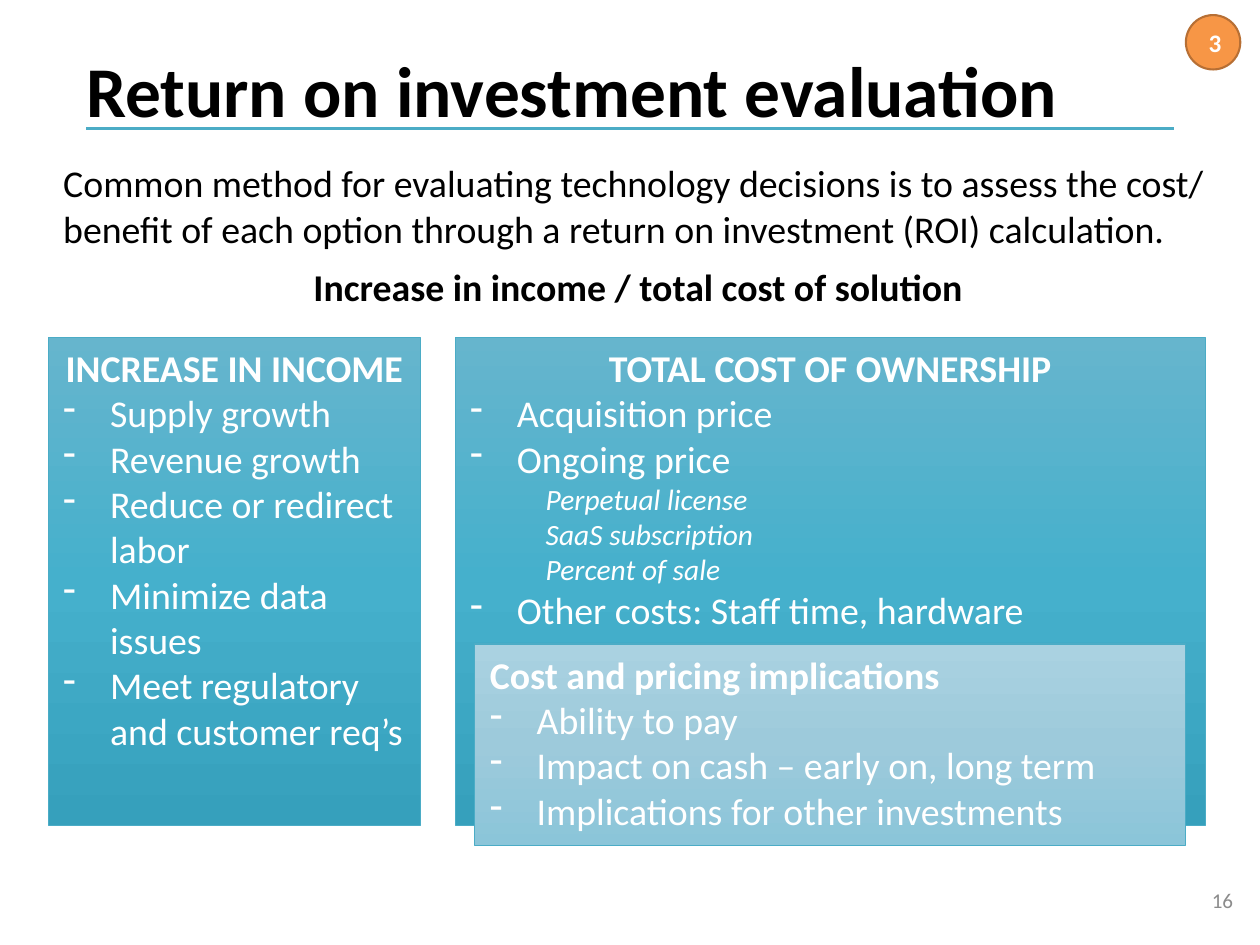
from copy import deepcopy

from lxml.etree import SubElement
from pptx import Presentation
from pptx.dml.color import RGBColor
from pptx.enum.shapes import MSO_CONNECTOR, MSO_SHAPE
from pptx.enum.text import MSO_ANCHOR, MSO_AUTO_SIZE, PP_ALIGN
from pptx.oxml.ns import qn
from pptx.util import Inches, Pt

BLACK = RGBColor(0x00, 0x00, 0x00)
WHITE = RGBColor(0xFF, 0xFF, 0xFF)
GRAY = RGBColor(0x8C, 0x8C, 0x8C)
TEAL = RGBColor(0x4B, 0xAC, 0xC6)
ORANGE = RGBColor(0xF7, 0x96, 0x46)
DARK_ORANGE = RGBColor(0xB7, 0x6F, 0x34)
STRONG_GRADIENT = (
    RGBColor(0x66, 0xB5, 0xCD),
    RGBColor(0x45, 0xB0, 0xCC),
    RGBColor(0x36, 0xA0, 0xBC),
)
PALE_GRADIENT = (
    RGBColor(0xAA, 0xD2, 0xE1),
    RGBColor(0x9D, 0xCA, 0xDB),
    RGBColor(0x8B, 0xC5, 0xD9),
)


def write(paragraph, text, size=18, color=BLACK, bold=False, italic=False,
          align=PP_ALIGN.LEFT, before=0, line_spacing=None, indent=0,
          bullet=None, font_name="Calibri"):
    properties = paragraph._p.get_or_add_pPr()
    if bullet:
        properties.set("marL", str(Inches(0.31)))
        properties.set("indent", str(Inches(-0.31)))
        SubElement(properties, qn("a:buChar")).set("char", bullet)
    elif indent:
        properties.set("marL", str(Inches(indent)))
        properties.set("indent", "0")
    paragraph.alignment = align
    paragraph.space_before = Pt(before)
    if line_spacing:
        paragraph.line_spacing = line_spacing
    run = paragraph.add_run()
    run.text = text
    run.font.name = font_name
    run.font.size = Pt(size)
    run.font.color.rgb = color
    run.font.bold = bold
    run.font.italic = italic


class SlideBuilder:
    def __init__(self, presentation):
        self.slide = presentation.slides.add_slide(presentation.slide_layouts[5])

    def fill_text(self, shape, lines, anchor=MSO_ANCHOR.TOP):
        frame = shape.text_frame
        frame.word_wrap = True
        frame.auto_size = MSO_AUTO_SIZE.NONE
        frame.vertical_anchor = anchor
        for index, (text, style) in enumerate(lines):
            paragraph = frame.add_paragraph() if index else frame.paragraphs[0]
            write(paragraph, text, **style)

    def title(self, text, left, top, width, height):
        shape = self.slide.shapes.title
        shape.left, shape.top = Inches(left), Inches(top)
        shape.width, shape.height = Inches(width), Inches(height)
        style = dict(size=34, bold=True, line_spacing=0.9)
        self.fill_text(shape, [(text, style)], MSO_ANCHOR.MIDDLE)

    def rule(self, left, right, y):
        line = self.slide.shapes.add_connector(
            MSO_CONNECTOR.STRAIGHT, Inches(left), Inches(y), Inches(right), Inches(y))
        line.line.color.rgb = TEAL
        line.line.width = Pt(1.5)
        SubElement(line._element.spPr, qn("a:effectLst"))

    def text(self, lines, left, top, width, height, anchor=MSO_ANCHOR.TOP):
        box = self.slide.shapes.add_textbox(
            Inches(left), Inches(top), Inches(width), Inches(height))
        self.fill_text(box, lines, anchor)

    def panel(self, lines, gradient, left, top, width, height):
        shape = self.slide.shapes.add_shape(
            MSO_SHAPE.RECTANGLE, Inches(left), Inches(top), Inches(width), Inches(height))
        shape.shadow.inherit = False
        shape.fill.gradient()
        shape.fill.gradient_angle = 270
        stop_list = shape._element.spPr.find(qn("a:gradFill")).find(qn("a:gsLst"))
        stop_list.append(deepcopy(stop_list[-1]))
        for index, (stop, color) in enumerate(zip(shape.fill.gradient_stops, gradient)):
            stop.position = index / 2
            stop.color.rgb = color
        shape.line.color.rgb = TEAL
        shape.line.width = Pt(0.5)
        self.fill_text(shape, lines)

    def badge(self, text, left, top, diameter):
        shape = self.slide.shapes.add_shape(
            MSO_SHAPE.OVAL, Inches(left), Inches(top), Inches(diameter), Inches(diameter))
        shape.shadow.inherit = False
        shape.fill.solid()
        shape.fill.fore_color.rgb = ORANGE
        shape.line.color.rgb = DARK_ORANGE
        shape.line.width = Pt(1)
        style = dict(size=12, color=WHITE, bold=True, align=PP_ALIGN.CENTER)
        self.fill_text(shape, [(text, style)], MSO_ANCHOR.MIDDLE)


def main():
    presentation = Presentation()
    presentation.slide_width = Inches(8.33)
    presentation.slide_height = Inches(6.25)
    builder = SlideBuilder(presentation)

    subheading = dict(color=WHITE, bold=True)
    heading = dict(subheading, align=PP_ALIGN.CENTER)
    item = dict(color=WHITE, bullet="-")
    detail = dict(size=14, color=WHITE, italic=True, indent=0.5)

    builder.rule(0.57, 7.76, 0.85)
    builder.title("Return on investment evaluation", 0.47, 0.23, 7.19, 0.79)
    builder.text([("16", dict(size=10, color=GRAY, align=PP_ALIGN.RIGHT))],
                 6.37, 5.79, 1.88, 0.33, MSO_ANCHOR.MIDDLE)
    builder.panel([
        ("TOTAL COST OF OWNERSHIP", heading),
        ("Acquisition price", item),
        ("Ongoing price", item),
        ("Perpetual license", detail),
        ("SaaS subscription", detail),
        ("Percent of sale", detail),
        ("Other costs: Staff time, hardware", item),
    ], STRONG_GRADIENT, 3.01, 2.23, 4.96, 3.23)
    builder.panel([
        ("Cost and pricing implications", subheading),
        ("Ability to pay", item),
        ("Impact on cash – early on, long term", item),
        ("Implications for other investments", item),
    ], PALE_GRADIENT, 3.14, 4.26, 4.7, 1.33)
    builder.panel([
        ("INCREASE IN INCOME", heading),
        ("Supply growth", item),
        ("Revenue growth", item),
        ("Reduce or redirect labor", item),
        ("Minimize data issues", item),
        ("Meet regulatory and customer req’s", item),
    ], STRONG_GRADIENT, 0.32, 2.23, 2.46, 3.23)
    builder.text([
        ("Common method for evaluating technology decisions is to assess the cost/ "
         "benefit of each option through a return on investment (ROI) calculation.", {}),
        ("Increase in income / total cost of solution",
         dict(bold=True, align=PP_ALIGN.CENTER, before=6)),
    ], 0.32, 1.01, 7.8, 1.09)
    builder.badge("3", 7.84, 0.1, 0.36)

    presentation.save("out.pptx")


if __name__ == "__main__":
    main()
